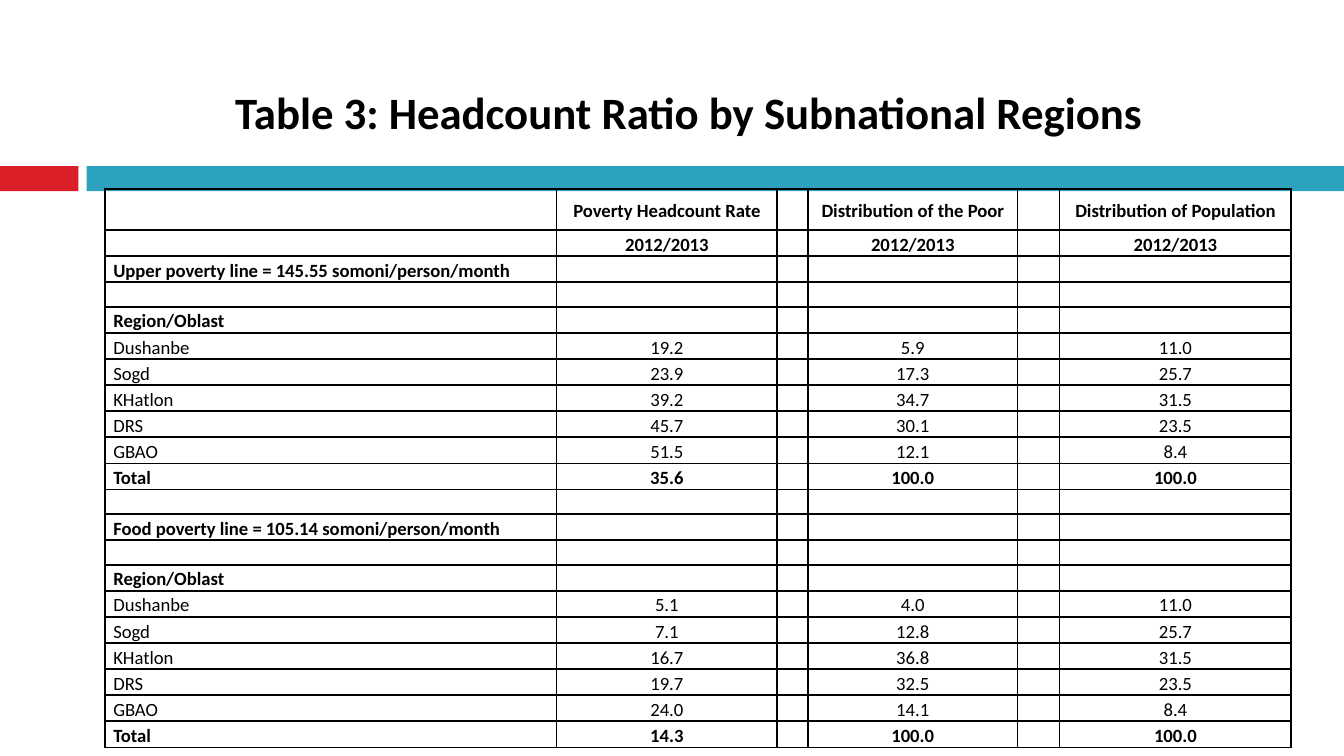
import pptx
import pptx.dml.color
import pptx.enum.shapes
import pptx.enum.text
import pptx.oxml.ns
import pptx.util
from lxml import etree

Pt = pptx.util.Pt
Align = pptx.enum.text.PP_ALIGN
Anchor = pptx.enum.text.MSO_ANCHOR
qn = pptx.oxml.ns.qn

REGIONS = ["Dushanbe", "Sogd", "KHatlon", "DRS", "GBAO", "Total"]
PEOPLE = ["11.0", "25.7", "31.5", "23.5", "8.4", "100.0"]
UPPER = (["19.2", "23.9", "39.2", "45.7", "51.5", "35.6"],
         ["5.9", "17.3", "34.7", "30.1", "12.1", "100.0"])
FOOD = (["5.1", "7.1", "16.7", "19.7", "24.0", "14.3"],
        ["4.0", "12.8", "36.8", "32.5", "14.1", "100.0"])
WIDTHS = [242, 118, 16.5, 112.5, 22.5, 124]


def color(value):
    return pptx.dml.color.RGBColor.from_string(value)


def block(head, rates):
    """Rows of one poverty line: heading, gap, label, regions."""
    return [[head], [], ["Region/Oblast"], *zip(REGIONS, *rates, PEOPLE)]


class Deck:
    font = "Calibri"
    ink = "000000"
    leading = 1.15

    def __init__(self, width, height):
        self.file = pptx.Presentation()
        self.file.slide_width = Pt(width)
        self.file.slide_height = Pt(height)
        self.slide = self.file.slides.add_slide(self.file.slide_layouts[5])

    def style(self, para, size, bold, align):
        para.alignment = align
        para.line_spacing = self.leading
        for run in para.runs:
            run.font.name = self.font
            run.font.size = Pt(size)
            run.font.bold = bold
            run.font.color.rgb = color(self.ink)

    def title(self, text, left, top, width, height):
        shape = self.slide.shapes.title
        shape.left, shape.top = Pt(left), Pt(top)
        shape.width, shape.height = Pt(width), Pt(height)
        frame = shape.text_frame
        frame.text = text
        frame.vertical_anchor = Anchor.BOTTOM
        self.style(frame.paragraphs[0], 24, True, Align.CENTER)

    def bar(self, fill, left, top, width, height):
        shape = self.slide.shapes.add_shape(
            pptx.enum.shapes.MSO_SHAPE.RECTANGLE,
            Pt(left), Pt(top), Pt(width), Pt(height))
        shape.shadow.inherit = False
        shape.fill.solid()
        shape.fill.fore_color.rgb = color(fill)
        shape.line.fill.background()

    def border(self, cell, sides):
        """Draw the named sides and clear the others."""
        props = cell._tc.get_or_add_tcPr()
        for side in "LRTB":
            line = etree.SubElement(props, qn("a:ln" + side), w=str(Pt(1)))
            if side in sides:
                fill = etree.SubElement(line, qn("a:solidFill"))
                etree.SubElement(fill, qn("a:srgbClr"), val=self.ink)
            else:
                etree.SubElement(line, qn("a:noFill"))

    def cell(self, cell, text, bold, align, sides="LRTB"):
        self.border(cell, sides)
        cell.fill.background()
        cell.margin_left = cell.margin_right = Pt(4.5)
        cell.margin_top = cell.margin_bottom = 0
        cell.vertical_anchor = Anchor.MIDDLE
        para = cell.text_frame.paragraphs[0]
        if text:
            para.text = text
            self.style(para, 10, bold, align)
        else:
            # The end mark sets the line height of an empty cell.
            etree.SubElement(para._p, qn("a:endParaRPr"), sz="1000")

    def table(self, rows, heights, left, top):
        """Place a table whose first row is a merged, open strip."""
        table = self.slide.shapes.add_table(
            len(rows), len(WIDTHS), Pt(left), Pt(top),
            Pt(sum(WIDTHS)), Pt(sum(heights))).table
        table.first_row = table.horz_banding = False
        for col, width in zip(table.columns, WIDTHS):
            col.width = Pt(width)
        for row, height in zip(table.rows, heights):
            row.height = Pt(height)
        for i, row in enumerate(rows):
            label, *values = row or [""]
            texts = [label, "", "", "", "", ""]
            for j, value in enumerate(values):
                texts[2 * j + 1] = value
            bold = label not in REGIONS[:-1]
            for j, text in enumerate(texts):
                self.cell(table.cell(i, j), text, bold,
                          Align.CENTER if j else Align.LEFT,
                          "LRTB" if i else "B")
        table.cell(0, 0).merge(table.cell(0, len(WIDTHS) - 1))


def main():
    deck = Deck(720, 405)
    deck.bar("DA1F28", 0, 89, 42, 13.5)
    deck.bar("2DA2BF", 46.5, 89, 673.5, 13.5)
    deck.title("Table 3: Headcount Ratio by Subnational Regions",
               48, 9.5, 642, 68.5)
    rows = [
        [],
        ["", "Poverty Headcount Rate", "Distribution of the Poor",
         "Distribution of Population"],
        ["", *["2012/2013"] * 3],
        *block("Upper poverty line = 145.55 somoni/person/month", UPPER),
        [],
        *block("Food poverty line = 105.14 somoni/person/month", FOOD),
    ]
    heights = [12.25, 22] + [13.2] * (len(rows) - 2)
    deck.table(rows, heights, 56.25, 89)
    deck.file.save("out.pptx")


if __name__ == "__main__":
    main()
